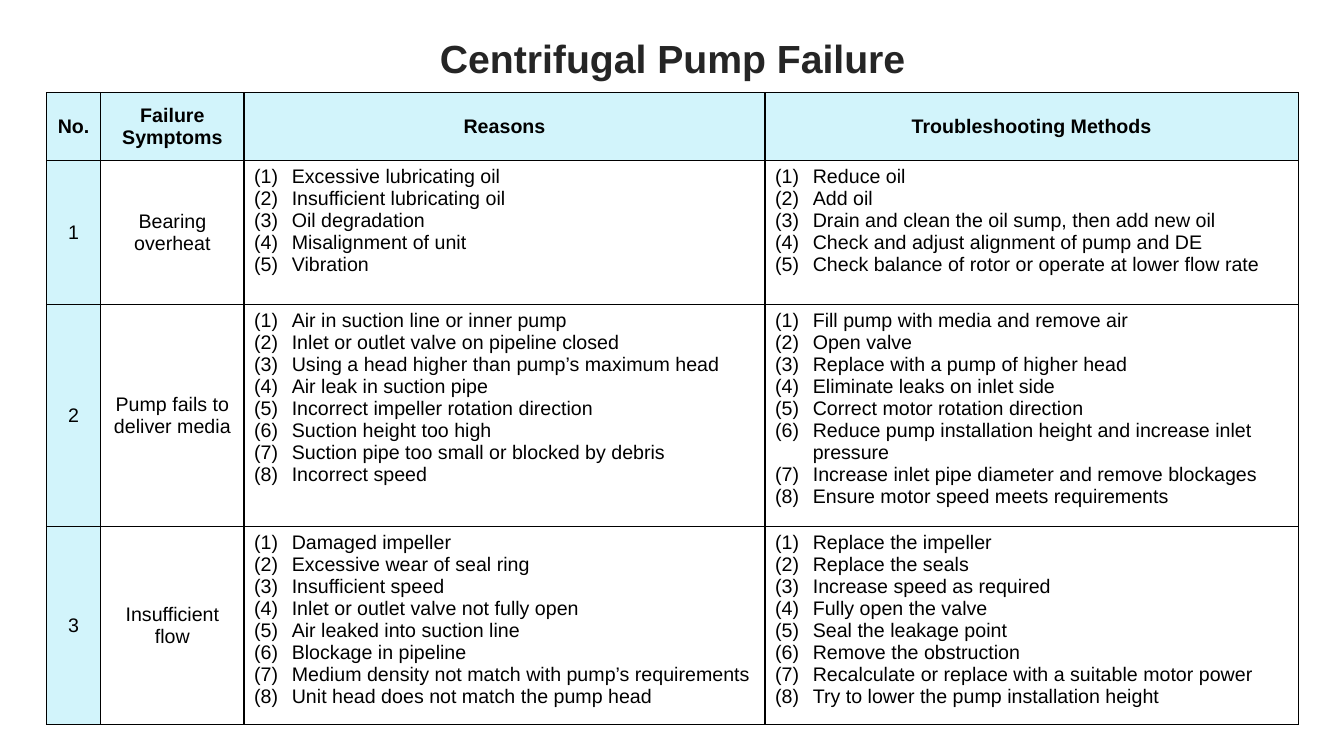
from lxml import etree
from pptx import Presentation
from pptx import util as u
from pptx.dml.color import RGBColor
from pptx.enum import text
from pptx.oxml import ns

BLACK = RGBColor(0x00, 0x00, 0x00)
WHITE = RGBColor(0xFF, 0xFF, 0xFF)
CHARCOAL = RGBColor(0x25, 0x25, 0x25)
PALE_CYAN = RGBColor(0xD2, 0xF4, 0xFB)

HEADERS = ["No.", "Failure Symptoms", "Reasons", "Troubleshooting Methods"]
COLUMN_WIDTHS = [1.37, 3.61, 13.13, 13.44]
ROW_HEIGHTS = [1.7, 3.63, 2.84, 2.84]

FAILURES = [
    ("Bearing overheat", [
        ("Excessive lubricating oil", "Reduce oil"),
        ("Insufficient lubricating oil", "Add oil"),
        ("Oil degradation", "Drain and clean the oil sump, then add new oil"),
        ("Misalignment of unit", "Check and adjust alignment of pump and DE"),
        ("Vibration", "Check balance of rotor or operate at lower flow rate"),
    ]),
    ("Pump fails to deliver media", [
        ("Air in suction line or inner pump", "Fill pump with media and remove air"),
        ("Inlet or outlet valve on pipeline closed", "Open valve"),
        ("Using a head higher than pump’s maximum head",
         "Replace with a pump of higher head"),
        ("Air leak in suction pipe", "Eliminate leaks on inlet side"),
        ("Incorrect impeller rotation direction", "Correct motor rotation direction"),
        ("Suction height too high",
         "Reduce pump installation height and increase inlet pressure"),
        ("Suction pipe too small or blocked by debris",
         "Increase inlet pipe diameter and remove blockages"),
        ("Incorrect speed", "Ensure motor speed meets requirements"),
    ]),
    ("Insufficient flow", [
        ("Damaged impeller", "Replace the impeller"),
        ("Excessive wear of seal ring", "Replace the seals"),
        ("Insufficient speed", "Increase speed as required"),
        ("Inlet or outlet valve not fully open", "Fully open the valve"),
        ("Air leaked into suction line", "Seal the leakage point"),
        ("Blockage in pipeline", "Remove the obstruction"),
        ("Medium density not match with pump’s requirements",
         "Recalculate or replace with a suitable motor power"),
        ("Unit head does not match the pump head",
         "Try to lower the pump installation height"),
    ]),
]


class Deck:
    """Holds the text style and the current slide."""

    def __init__(self, prs, font="Arial", size=14):
        """Add a title-only slide and keep the style."""
        self.font, self.size = font, size
        self.slide = prs.slides.add_slide(prs.slide_layouts[5])

    def style(self, p, size, color, bold):
        """Set the font of a whole paragraph."""
        p.font.name, p.font.size = self.font, u.Pt(size)
        p.font.color.rgb, p.font.bold = color, bold

    def title(self, words, left, top, width, height):
        """Place and format the title placeholder."""
        sp = self.slide.shapes.title
        sp.left, sp.top, sp.width, sp.height = map(u.Cm, (left, top, width, height))
        tf = sp.text_frame
        tf.text = words
        tf.word_wrap = True
        tf.auto_size = text.MSO_AUTO_SIZE.SHAPE_TO_FIT_TEXT
        tf.vertical_anchor = text.MSO_ANCHOR.TOP
        tf.margin_left = tf.margin_right = tf.margin_bottom = 0
        tf.margin_top = u.Cm(0.05)
        p = tf.paragraphs[0]
        p.alignment = text.PP_ALIGN.CENTER
        self.style(p, 28, CHARCOAL, True)

    def table(self, left, top, height, widths, heights):
        """Add an empty table and return it."""
        sp = self.slide.shapes.add_table(
            len(heights), len(widths), u.Cm(left), u.Cm(top),
            u.Cm(sum(widths)), u.Cm(height))
        for column, width in zip(sp.table.columns, widths):
            column.width = u.Cm(width)
        for row, row_height in zip(sp.table.rows, heights):
            row.height = u.Cm(row_height)
        sp.height = u.Cm(height)
        return sp.table

    def box(self, cell, fill):
        """Give a cell thin black borders and a fill."""
        tc_pr = cell._tc.get_or_add_tcPr()
        for side in ("lnL", "lnR", "lnT", "lnB"):
            ln = etree.SubElement(tc_pr, ns.qn(f"a:{side}"), w=str(u.Pt(1)))
            solid = etree.SubElement(ln, ns.qn("a:solidFill"))
            etree.SubElement(solid, ns.qn("a:srgbClr"), val=str(BLACK))
        cell.fill.solid()
        cell.fill.fore_color.rgb = fill

    def label(self, cell, words, fill, bold=False):
        """Write a centred label in a cell."""
        self.box(cell, fill)
        cell.vertical_anchor = text.MSO_ANCHOR.MIDDLE
        cell.text = words
        p = cell.text_frame.paragraphs[0]
        p.alignment = text.PP_ALIGN.CENTER
        self.style(p, self.size, BLACK, bold)

    def numbered(self, cell, items):
        """Write a numbered list in a cell."""
        self.box(cell, WHITE)
        cell.text = "\n".join(items)
        indent = u.Cm(0.95)
        for p in cell.text_frame.paragraphs:
            p_pr = p._p.get_or_add_pPr()
            p_pr.set("marL", str(indent))
            p_pr.set("indent", str(-indent))
            etree.SubElement(p_pr, ns.qn("a:buAutoNum"), type="arabicParenBoth")
            self.style(p, self.size, BLACK, False)


def main():
    """Build the pump failure slide."""
    prs = Presentation()
    prs.slide_width, prs.slide_height = u.Cm(33.87), u.Cm(19.05)
    s = Deck(prs)
    table = s.table(1.17, 2.34, 15.9, COLUMN_WIDTHS, ROW_HEIGHTS)
    for column, header in enumerate(HEADERS):
        s.label(table.cell(0, column), header, PALE_CYAN, bold=True)
    for number, (symptom, pairs) in enumerate(FAILURES, start=1):
        s.label(table.cell(number, 0), str(number), PALE_CYAN)
        s.label(table.cell(number, 1), symptom, WHITE)
        for column, items in enumerate(zip(*pairs), start=2):
            s.numbered(table.cell(number, column), items)
    s.title("Centrifugal Pump Failure", 7.6, 0.82, 18.7, 1.24)
    prs.save("out.pptx")


if __name__ == "__main__":
    main()
